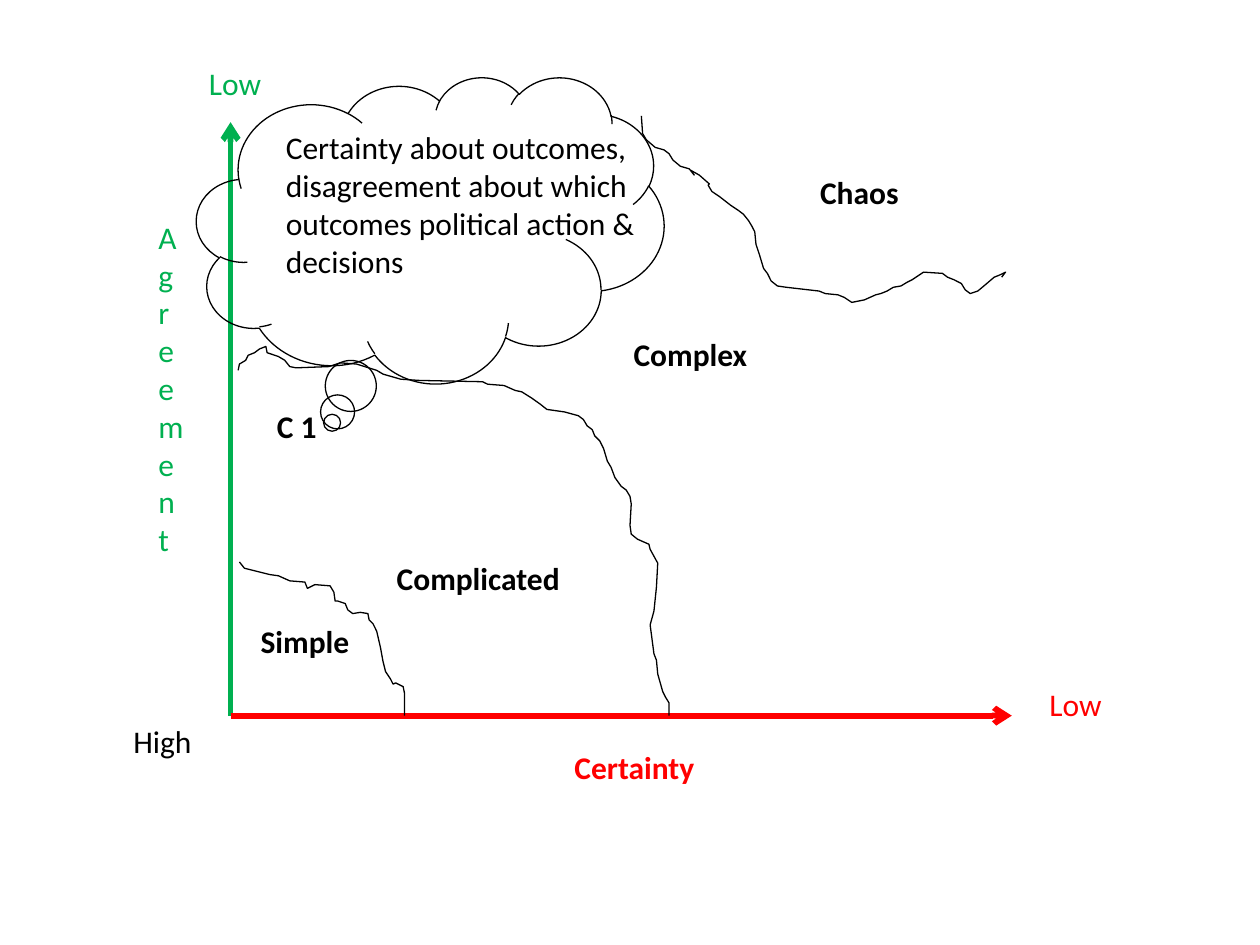
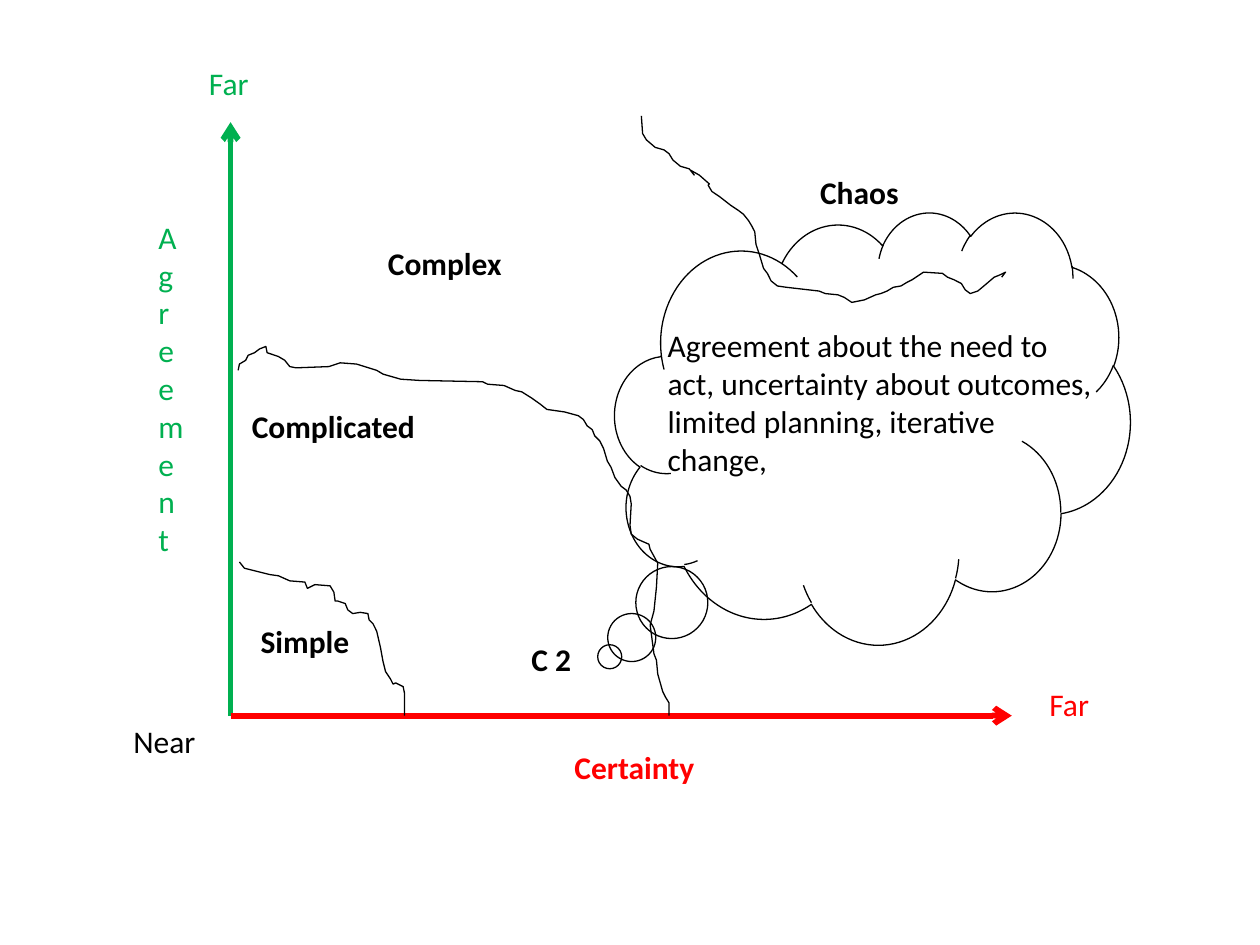
from lxml import etree
from pptx import Presentation
from pptx import util as u
from pptx.dml.color import RGBColor
from pptx.enum import shapes, text
from pptx.oxml.ns import qn

BLACK = RGBColor(0x00, 0x00, 0x00)
GREEN = RGBColor(0x00, 0xB0, 0x50)
RED = RGBColor(0xFF, 0x00, 0x00)

# Axes, in inches
ORIGIN = (1.83, 5.68)
AGREEMENT_END = (1.83, 0.97)
CERTAINTY_END = (8.03, 5.68)
LABEL_HEIGHT = 0.39

# Hand-drawn borders between the zones, in inches
SIMPLE_BORDER = [
    (1.9, 4.46), (1.94, 4.51), (2.02, 4.53), (2.06, 4.54), (2.14, 4.56),
    (2.21, 4.57), (2.3, 4.61), (2.42, 4.62), (2.44, 4.67), (2.5, 4.64),
    (2.62, 4.65), (2.65, 4.7), (2.66, 4.77), (2.68, 4.77), (2.74, 4.79),
    (2.76, 4.84), (2.8, 4.87), (2.86, 4.86), (2.92, 4.87), (2.93, 4.92),
    (2.96, 4.95), (2.99, 5.01), (3.02, 5.14), (3.04, 5.25), (3.06, 5.33),
    (3.1, 5.39), (3.12, 5.43), (3.14, 5.42), (3.2, 5.45), (3.21, 5.5),
    (3.21, 5.68),
]
COMPLICATED_BORDER = [
    (1.89, 2.94), (1.9, 2.89), (1.95, 2.86), (1.97, 2.82), (2.02, 2.8),
    (2.06, 2.77), (2.11, 2.75), (2.12, 2.8), (2.21, 2.83), (2.26, 2.86),
    (2.3, 2.91), (2.35, 2.92), (2.61, 2.91), (2.7, 2.88), (2.83, 2.89),
    (2.99, 2.94), (3.04, 2.97), (3.18, 3.01), (3.33, 3.02), (3.83, 3.03),
    (3.87, 3.05), (4, 3.06), (4.09, 3.1), (4.14, 3.11), (4.22, 3.16),
    (4.29, 3.21), (4.34, 3.25), (4.48, 3.27), (4.59, 3.3), (4.63, 3.33),
    (4.66, 3.38), (4.7, 3.41), (4.72, 3.46), (4.76, 3.5), (4.79, 3.56),
    (4.82, 3.66), (4.85, 3.71), (4.88, 3.79), (4.93, 3.86), (4.97, 3.89),
    (5, 3.94), (5.01, 4), (5, 4.17), (5.01, 4.24), (5.06, 4.28),
    (5.15, 4.32), (5.16, 4.36), (5.22, 4.47), (5.21, 4.66), (5.19, 4.85),
    (5.16, 4.96), (5.19, 5.19), (5.21, 5.24), (5.22, 5.35), (5.26, 5.49),
    (5.28, 5.53), (5.31, 5.58), (5.31, 5.68),
]
CHAOS_BORDER = [
    (5.09, 0.92), (5.1, 1.06), (5.13, 1.11), (5.2, 1.17), (5.27, 1.19),
    (5.31, 1.22), (5.34, 1.27), (5.4, 1.32), (5.47, 1.34), (5.51, 1.39),
    (5.48, 1.35), (5.55, 1.39), (5.63, 1.46), (5.62, 1.47), (5.65, 1.52),
    (5.71, 1.56), (5.8, 1.63), (5.86, 1.67), (5.9, 1.7), (5.94, 1.75),
    (5.97, 1.8), (5.99, 1.84), (6, 1.94), (6.03, 2.03), (6.06, 2.13),
    (6.09, 2.17), (6.12, 2.23), (6.17, 2.27), (6.24, 2.28), (6.5, 2.31),
    (6.55, 2.33), (6.65, 2.34), (6.7, 2.36), (6.76, 2.4), (6.86, 2.38),
    (6.95, 2.34), (6.99, 2.33), (7.04, 2.31), (7.09, 2.28), (7.15, 2.27),
    (7.2, 2.24), (7.24, 2.22), (7.33, 2.16), (7.48, 2.17), (7.52, 2.2),
    (7.57, 2.22), (7.63, 2.25), (7.66, 2.3), (7.7, 2.33), (7.76, 2.31),
    (7.82, 2.26), (7.89, 2.2), (7.94, 2.18), (7.98, 2.16), (7.95, 2.2),
]


class Diagram:
    """Holds the shared style and the slide being drawn."""

    font = "Calibri"
    font_size = u.Pt(18)
    axis_width = u.Pt(3.25)
    outline_width = u.Pt(0.75)

    def __init__(self, presentation):
        self.presentation = presentation
        self.slide = None

    def new_slide(self):
        blank = self.presentation.slide_layouts[6]
        self.slide = self.presentation.slides.add_slide(blank)

    def axis(self, end, color):
        points = [u.Inches(value) for value in ORIGIN + end]
        connector = self.slide.shapes.add_connector(
            shapes.MSO_CONNECTOR.STRAIGHT, *points)
        connector.line.color.rgb = color
        connector.line.width = self.axis_width
        etree.SubElement(connector.line._get_or_add_ln(), qn("a:tailEnd"), type="arrow")
        etree.SubElement(connector._element.spPr, qn("a:effectLst"))

    def outline(self, shape):
        shape.shadow.inherit = False
        shape.fill.background()
        shape.line.color.rgb = BLACK
        shape.line.width = self.outline_width

    def border(self, points):
        start, *rest = [(u.Inches(x), u.Inches(y)) for x, y in points]
        builder = self.slide.shapes.build_freeform(*start)
        builder.add_line_segments(rest, close=False)
        self.outline(builder.convert_to_shape())

    def cloud(self, left, top, width, height, pointer):
        shape = self.slide.shapes.add_shape(
            shapes.MSO_SHAPE.CLOUD_CALLOUT, u.Inches(left), u.Inches(top),
            u.Inches(width), u.Inches(height))
        for index, value in enumerate(pointer):
            shape.adjustments[index] = value
        self.outline(shape)

    def label(self, words, left, top, width, height=LABEL_HEIGHT,
              color=BLACK, bold=False):
        box = self.slide.shapes.add_textbox(
            u.Inches(left), u.Inches(top), u.Inches(width), u.Inches(height))
        frame = box.text_frame
        frame.word_wrap = True
        frame.auto_size = text.MSO_AUTO_SIZE.SHAPE_TO_FIT_TEXT
        paragraph = frame.paragraphs[0]
        paragraph.text = words
        paragraph.font.name = self.font
        paragraph.font.size = self.font_size
        paragraph.font.bold = bold
        paragraph.font.color.rgb = color

    def matrix(self, near, far, complicated_at, complex_at):
        """Draw the axes, zones and labels that every slide has."""
        self.axis(AGREEMENT_END, GREEN)
        self.axis(CERTAINTY_END, RED)
        for points in (SIMPLE_BORDER, CHAOS_BORDER, COMPLICATED_BORDER):
            self.border(points)

        # Zone names
        self.label("Simple", 1.97, 4.89, 1.21, bold=True)
        self.label("Complicated", *complicated_at, 1.95, bold=True)
        self.label("Complex", *complex_at, 1.95, bold=True)
        self.label("Chaos", 6.41, 1.32, 1.08, bold=True)

        # Axis names and ends; the narrow box stacks the letters
        self.label("Certainty", 4.46, 5.89, 2.22, color=RED, bold=True)
        self.label("Agreement", 1.16, 1.68, 0.34, 2.81, color=GREEN)
        self.label(far, 1.56, 0.46, 0.81, color=GREEN)
        self.label(far, 8.23, 5.39, 0.81, color=RED)
        self.label(near, 0.96, 5.68, 0.88)


def main():
    presentation = Presentation()
    presentation.slide_width = u.Inches(10)
    presentation.slide_height = u.Inches(7.5)
    diagram = Diagram(presentation)

    # Slide 1: certainty without agreement
    diagram.new_slide()
    diagram.matrix("High", "Low", complicated_at=(3.05, 4.39), complex_at=(4.93, 2.61))
    diagram.label("C 1", 2.1, 3.18, 0.74, bold=True)
    diagram.cloud(1.56, 0.61, 3.71, 2.43, pointer=(-0.21, 0.63))
    diagram.label("Certainty about outcomes, disagreement about which outcomes "
                  "political action & decisions", 2.17, 0.97, 3.44, 1.3)

    # Slide 2: agreement without certainty
    diagram.new_slide()
    diagram.matrix("Near", "Far", complicated_at=(1.9, 3.18), complex_at=(2.98, 1.89))
    diagram.label("C 2", 4.12, 5.03, 0.74, bold=True)
    diagram.cloud(4.88, 1.68, 4.09, 3.43, pointer=(-0.51, 0.53))
    diagram.label("Agreement about the need to act, uncertainty about outcomes, "
                  "limited planning, iterative change,", 5.2, 2.54, 3.64, 1)

    presentation.save("out.pptx")


if __name__ == "__main__":
    main()
